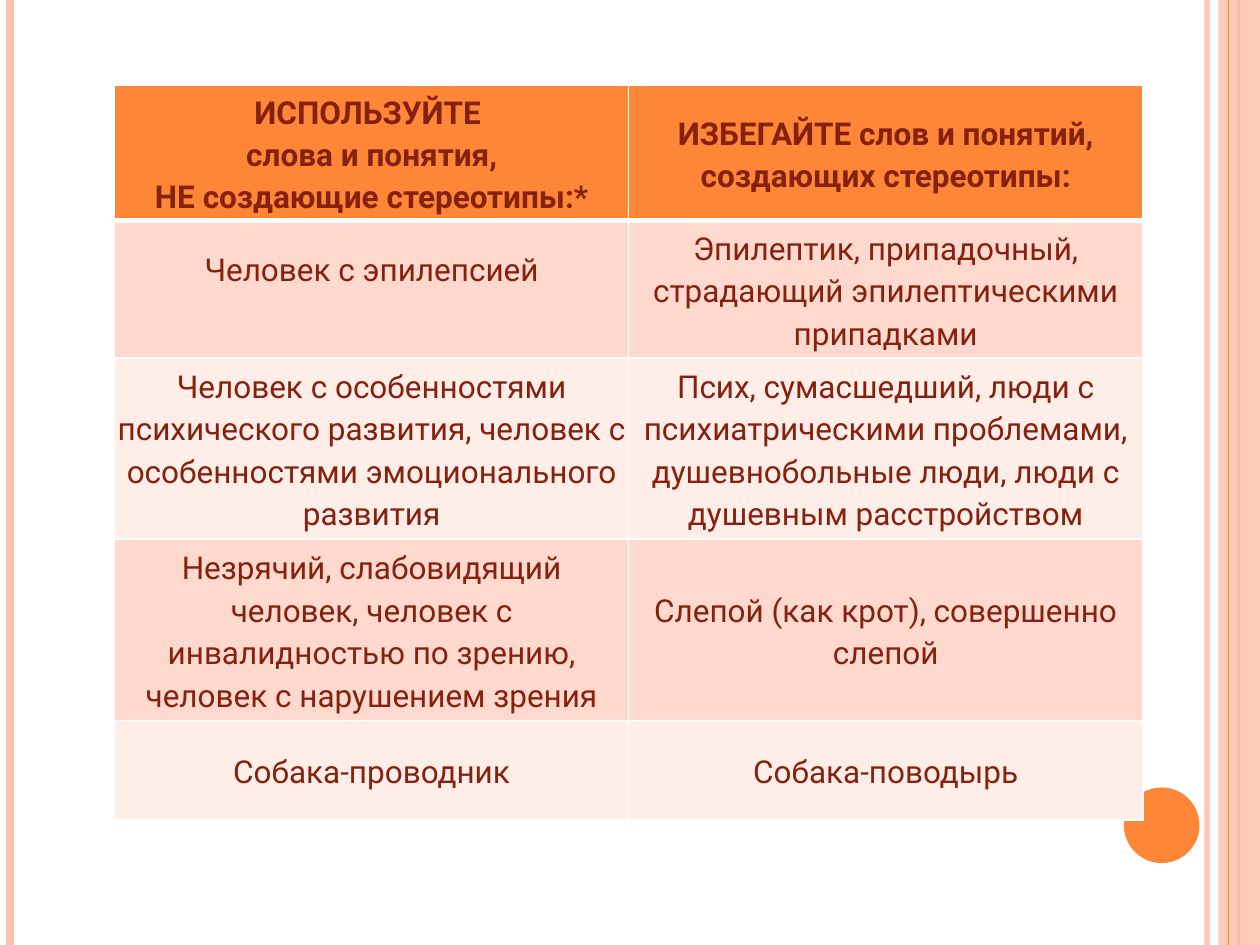
from lxml import etree
from pptx import Presentation
from pptx.dml.color import RGBColor
from pptx.enum.shapes import MSO_CONNECTOR, MSO_SHAPE
from pptx.enum.text import MSO_ANCHOR, PP_ALIGN
from pptx.oxml.ns import qn
from pptx.util import Inches, Pt

STRAIGHT = MSO_CONNECTOR.STRAIGHT
RECTANGLE, OVAL = MSO_SHAPE.RECTANGLE, MSO_SHAPE.OVAL
CENTER, MIDDLE = PP_ALIGN.CENTER, MSO_ANCHOR.MIDDLE
ORANGE = RGBColor(0xFE, 0x86, 0x37)
PEACH = RGBColor(0xFE, 0xC3, 0xAE)
DARK_BAND = RGBColor(0xFF, 0xD9, 0xCE)
LIGHT_BAND = RGBColor(0xFF, 0xED, 0xE8)
BROWN = RGBColor(0x86, 0x21, 0x10)
WHITE = RGBColor(0xFF, 0xFF, 0xFF)

presentation = Presentation()
presentation.slide_width, presentation.slide_height = Inches(10), Inches(7.5)
slide = presentation.slides.add_slide(presentation.slide_layouts[6])
slide_height = presentation.slide_height


def set_opacity(fill_parent, percent):
    color = fill_parent.find(qn("a:solidFill"))[0]
    etree.SubElement(color, qn("a:alpha")).set("val", str(percent * 1000))


def add_rule(x, color, width, opacity):
    rule = slide.shapes.add_connector(STRAIGHT, Inches(x), 0, Inches(x), slide_height)
    rule.line.color.rgb = color
    rule.line.width = Pt(width)
    properties = rule._element.spPr
    set_opacity(properties.find(qn("a:ln")), opacity)
    etree.SubElement(properties, qn("a:effectLst"))


for x, color, width, opacity in [
    (9.58, PEACH, 3, 93),
    (0.08, PEACH, 4.5, 100),
    (9.83, ORANGE, 1.5, 100),
]:
    add_rule(x, color, width, opacity)

side_band = slide.shapes.add_shape(RECTANGLE, Inches(9.67), 0, Inches(0.33), slide_height)
side_band.fill.solid()
side_band.fill.fore_color.rgb = PEACH
set_opacity(side_band._element.spPr, 87)
add_rule(9.75, ORANGE, 0.75, 100)
circle = slide.shapes.add_shape(OVAL, Inches(8.92), Inches(6.25), Inches(0.6), Inches(0.6))
circle.fill.solid()
circle.fill.fore_color.rgb = ORANGE
for shape in (side_band, circle):
    shape.line.fill.background()
    shape.shadow.inherit = False

rows = [
    (1.07, "ИСПОЛЬЗУЙТЕ \nслова и понятия,\vНЕ создающие стереотипы:*",
     "ИЗБЕГАЙТЕ слов и понятий,\vсоздающих стереотипы:"),
    (1.09, "Человек с эпилепсией",
     "Эпилептик, припадочный, страдающий эпилептическими припадками"),
    (1.44, "Человек с особенностями психического развития, человек с "
     "особенностями эмоционального развития",
     "Псих, сумасшедший, люди с психиатрическими проблемами, "
     "душевнобольные люди, люди с душевным расстройством"),
    (1.44, "Незрячий, слабовидящий человек, человек с инвалидностью по зрению,"
     "\vчеловек с нарушением зрения",
     "Слепой (как крот), совершенно слепой"),
    (0.79, "Собака-проводник", "Собака-поводырь"),
]
table = slide.shapes.add_table(
    len(rows), 2, Inches(0.91), Inches(0.68), Inches(8.16), Inches(5.83)
).table
for column in table.columns:
    column.width = Inches(4.08)

for row_index, (height, *texts) in enumerate(rows):
    table.rows[row_index].height = Inches(height)
    is_header = row_index == 0
    band = ORANGE if is_header else (LIGHT_BAND, DARK_BAND)[row_index % 2]
    for column_index, text in enumerate(texts):
        cell = table.cell(row_index, column_index)
        cell.vertical_anchor = MIDDLE
        cell.margin_left = cell.margin_right = Inches(0.01)
        cell.margin_top = cell.margin_bottom = Inches(0.01)
        properties = cell._tc.get_or_add_tcPr()
        for side in ("lnL", "lnR", "lnT", "lnB"):
            thick = (is_header and side == "lnB") or (row_index == 1 and side == "lnT")
            border = etree.SubElement(properties, qn(f"a:{side}"), w=str(Pt(3 if thick else 1)))
            border_fill = etree.SubElement(border, qn("a:solidFill"))
            etree.SubElement(border_fill, qn("a:srgbClr"), val=str(WHITE))
        cell.fill.solid()
        cell.fill.fore_color.rgb = band
        frame = cell.text_frame
        for paragraph_index, paragraph_text in enumerate(text.split("\n")):
            paragraph = frame.add_paragraph() if paragraph_index else frame.paragraphs[0]
            paragraph.alignment = CENTER
            paragraph.line_spacing = 1.15
            for line_index, line_text in enumerate(paragraph_text.split("\v")):
                if line_index:
                    paragraph.add_line_break()
                run = paragraph.add_run()
                run.text = line_text
                run.font.name = "Roboto"
                run.font.size = Pt(18)
                run.font.bold = is_header
                run.font.color.rgb = BROWN

table.cell(1, 0).margin_bottom = Inches(0.35)

presentation.save("out.pptx")
